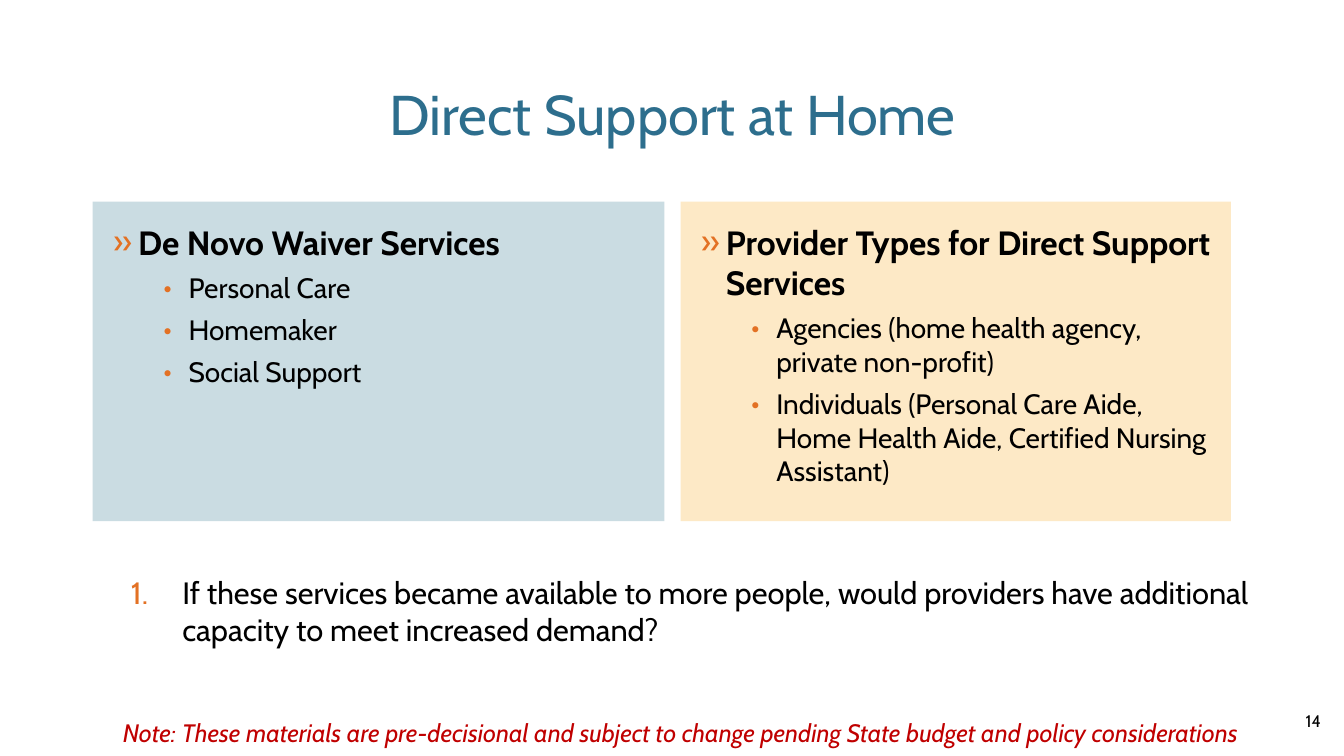
from lxml.etree import SubElement
from pptx import Presentation
from pptx.dml.color import RGBColor
from pptx.enum.shapes import MSO_SHAPE
from pptx.enum.text import MSO_ANCHOR, PP_ALIGN
from pptx.oxml.ns import qn
from pptx.util import Inches, Pt

TEAL = RGBColor(0x2D, 0x6E, 0x8D)
ORANGE = RGBColor(0xE3, 0x71, 0x24)
PALE_BLUE = RGBColor(0xCA, 0xDC, 0xE2)
PALE_YELLOW = RGBColor(0xFD, 0xE9, 0xC6)
RED = RGBColor(0xC0, 0x00, 0x00)
BLACK = RGBColor(0x00, 0x00, 0x00)

HEADING = {"size": 24, "bold": True, "bullet": "»", "indent": 0.25,
           "hanging": 0.25, "after": 6}
ITEM = {"size": 20, "bullet": "•", "indent": 0.75, "hanging": 0.25,
        "after": 6, "level": 1}
QUESTION = {"size": 22, "number": "arabicPeriod", "indent": 0.74,
            "hanging": 0.51, "level": 4}

PANEL_TOP, PANEL_HEIGHT = 2, 3.17
panels = [
    {"left": 0.92, "width": 5.67, "fill": PALE_BLUE,
     "heading": "De Novo Waiver Services",
     "items": ["Personal Care", "Homemaker", "Social Support"]},
    {"left": 6.75, "width": 5.46, "fill": PALE_YELLOW,
     "heading": "Provider Types for Direct Support Services",
     "items": ["Agencies (home health agency, private non-profit)",
               "Individuals (Personal Care Aide, Home Health Aide, "
               "Certified Nursing Assistant)"]},
]
captions = [
    ("Direct Support at Home", (0.92, 0.4, 11.5, 1.45), MSO_ANCHOR.MIDDLE,
     {"size": 40, "color": TEAL, "align": PP_ALIGN.CENTER}),
    ("If these services became available to more people, would providers "
     "have additional capacity to meet increased demand?",
     (0.97, 5.16, 11.56, 1.79), MSO_ANCHOR.MIDDLE, QUESTION),
    ("Note: These materials are pre-decisional and subject to change pending "
     "State budget and policy considerations",
     (0.22, 7.07, 13.06, 0.28), MSO_ANCHOR.TOP,
     {"size": 18, "color": RED, "italic": True, "align": PP_ALIGN.CENTER}),
    ("14", (10.2, 6.95, 3, 0.4), MSO_ANCHOR.MIDDLE,
     {"size": 12, "align": PP_ALIGN.RIGHT}),
]


def add_bullet(paragraph, style):
    props = paragraph._p.get_or_add_pPr()
    props.set("marL", str(Inches(style["indent"])))
    props.set("indent", str(-Inches(style["hanging"])))
    color = SubElement(props, qn("a:buClr"))
    SubElement(color, qn("a:srgbClr"), val=str(ORANGE))
    SubElement(props, qn("a:buFont"), typeface="Cabin")
    if "number" in style:
        SubElement(props, qn("a:buAutoNum"), type=style["number"])
    else:
        SubElement(props, qn("a:buChar"), char=style["bullet"])


def write(paragraph, text, style):
    layout = {"alignment": style.get("align", PP_ALIGN.LEFT),
              "level": style.get("level", 0),
              "space_before": Pt(0),
              "space_after": Pt(style.get("after", 0))}
    for name, value in layout.items():
        setattr(paragraph, name, value)
    if "indent" in style:
        add_bullet(paragraph, style)
    run = paragraph.add_run()
    run.text = text
    letters = {"name": "Cabin", "size": Pt(style["size"]),
               "bold": style.get("bold", False),
               "italic": style.get("italic", False)}
    for name, value in letters.items():
        setattr(run.font, name, value)
    run.font.color.rgb = style.get("color", BLACK)


def add_panel(slide, panel):
    box = slide.shapes.add_shape(
        MSO_SHAPE.RECTANGLE, Inches(panel["left"]), Inches(PANEL_TOP),
        Inches(panel["width"]), Inches(PANEL_HEIGHT))
    box.shadow.inherit = False
    box.fill.solid()
    box.fill.fore_color.rgb = panel["fill"]
    box.line.fill.background()
    frame = box.text_frame
    settings = {"word_wrap": True, "vertical_anchor": MSO_ANCHOR.TOP,
                "margin_left": Inches(0.2), "margin_top": Inches(0.2),
                "margin_right": Inches(0.2), "margin_bottom": Inches(0.05)}
    for name, value in settings.items():
        setattr(frame, name, value)
    write(frame.paragraphs[0], panel["heading"], HEADING)
    for item in panel["items"]:
        write(frame.add_paragraph(), item, ITEM)


def add_caption(slide, text, place, anchor, style):
    frame = slide.shapes.add_textbox(*map(Inches, place)).text_frame
    frame.word_wrap = True
    frame.vertical_anchor = anchor
    write(frame.paragraphs[0], text, style)


def main():
    deck = Presentation()
    deck.slide_width, deck.slide_height = Inches(13.33), Inches(7.5)
    slide = deck.slides.add_slide(deck.slide_layouts[6])
    for panel in panels:
        add_panel(slide, panel)
    for caption in captions:
        add_caption(slide, *caption)
    deck.save("out.pptx")


if __name__ == "__main__":
    main()
